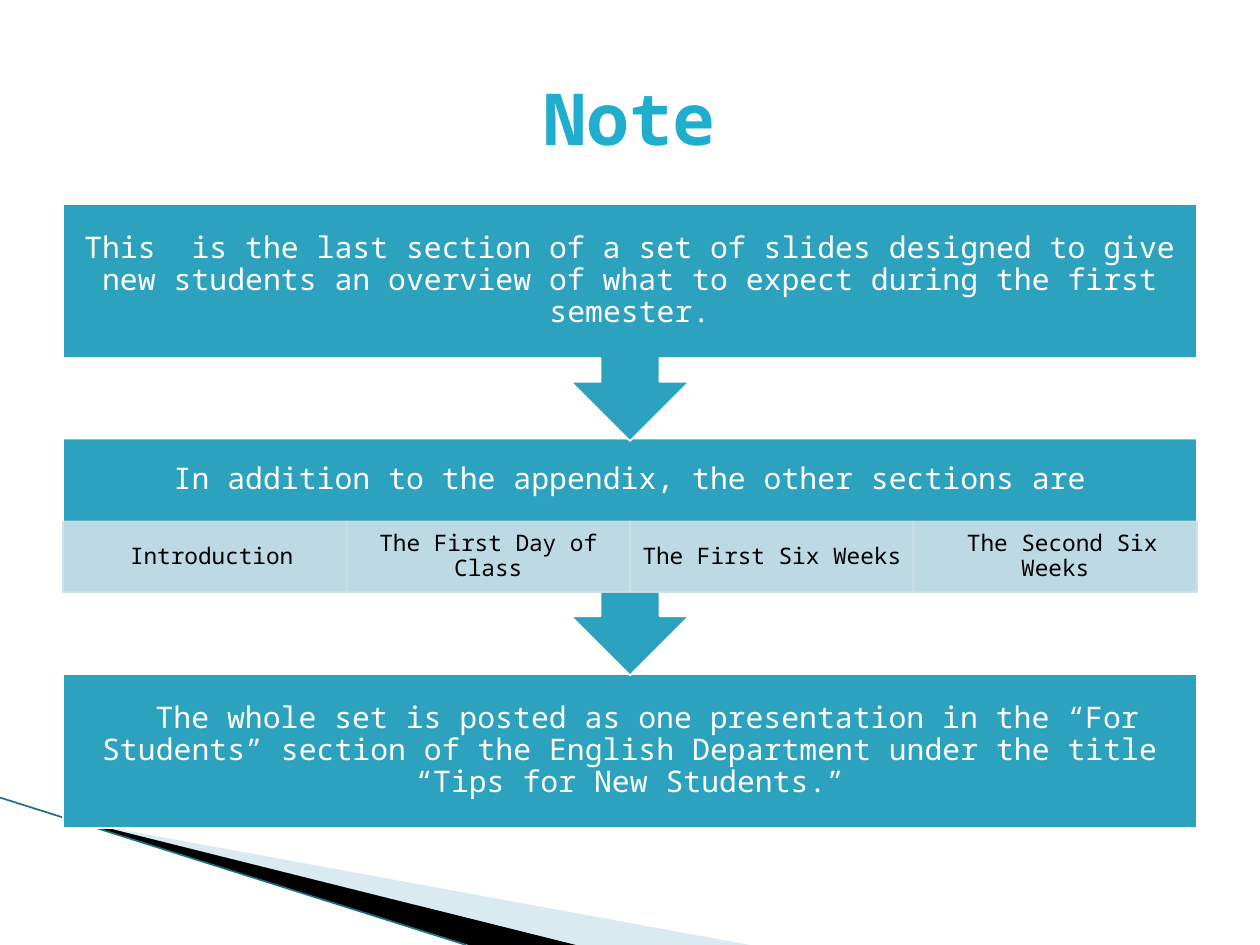
"""Build the Note slide: three statements linked by downward callouts."""
from dataclasses import dataclass

import lxml.etree
import pptx
import pptx.dml.color
import pptx.enum.shapes
import pptx.enum.text
import pptx.oxml.ns
import pptx.util

Inches = pptx.util.Inches
Pt = pptx.util.Pt
Kind = pptx.enum.shapes.MSO_SHAPE


@dataclass(frozen=True)
class Theme:
    font: str = "Noto Sans Mono"
    title_size: float = 41
    statement_size: float = 17
    section_size: float = 13
    title: str = "1FAECD"
    block: str = "2DA2BF"
    section: str = "CDE0E8"
    pale_wedge: str = "A0CBDC"
    edge: str = "1B7088"
    light: str = "FFFFFF"
    dark: str = "000000"


@dataclass(frozen=True)
class Box:
    left: float
    top: float
    width: float
    height: float

    def lengths(self) -> tuple:
        return tuple(Inches(v) for v in (self.left, self.top, self.width, self.height))


@dataclass(frozen=True)
class TextStyle:
    size: float
    color: str
    margins: tuple = (0.13, 0.13)
    spacing: float = 0.9
    bold: bool = False


@dataclass(frozen=True)
class Callout:
    top: float
    text_height: float
    text: str


@dataclass(frozen=True)
class Section:
    text: str
    indent: float = 0


@dataclass(frozen=True)
class Wedge:
    points: tuple
    color: str
    opacity: int = 100


THEME = Theme()
STATEMENT = TextStyle(THEME.statement_size, THEME.light)
SECTION = TextStyle(THEME.section_size, THEME.dark, (0.1, 0.02))
TITLE = TextStyle(THEME.title_size, THEME.title, (0.1, 0.05), 1, True)

LEFT, WIDTH = 0.5, 9
CALLOUT_HEIGHT = 1.88
SECTION_TOP, SECTION_HEIGHT = 4.14, 0.56

CALLOUTS = (
    Callout(1.62, 1.22, "This  is the last section of a set of slides designed to give new "
            "students an overview of what to expect during the first semester."),
    Callout(3.48, 0.66, "In addition to the appendix, the other sections are"),
)
SECTIONS = (
    Section("Introduction", 0.11),
    Section("The First Day of Class"),
    Section("The First Six Weeks"),
    Section("The Second Six Weeks", 0.11),
)
CLOSING = ("The whole set is posted as one presentation in the “For Students” section of "
           "the English Department under the title “Tips for New Students.”")
WEDGES = (
    Wedge(((0.55, 6.51), (5.95, 7.5), (4.56, 7.5), (0.55, 6.5)), THEME.pale_wedge, 40),
    Wedge(((0.53, 6.49), (4.57, 7.5), (3.72, 7.5), (0.54, 6.5)), THEME.dark),
)


def rgb(color: str) -> pptx.dml.color.RGBColor:
    return pptx.dml.color.RGBColor.from_string(color)


def paint(fill, parent, color: str, opacity: int) -> None:
    fill.solid()
    fill.fore_color.rgb = rgb(color)
    if opacity < 100:
        srgb = parent.find(pptx.oxml.ns.qn("a:solidFill"))[0]
        alpha = lxml.etree.SubElement(srgb, pptx.oxml.ns.qn("a:alpha"))
        alpha.set("val", str(opacity * 1000))


def add_block(slide, kind, box: Box, color: str, outline: str, opacity: int = 100):
    block = slide.shapes.add_shape(kind, *box.lengths())
    block.shadow.inherit = False
    paint(block.fill, block.element.spPr, color, opacity)
    block.line.width = Pt(1)
    paint(block.line.fill, block.line._get_or_add_ln(), outline, opacity)
    return block


def write(shape, text: str, style: TextStyle, indent: float = 0) -> None:
    frame = shape.text_frame
    frame.word_wrap = True
    frame.vertical_anchor = pptx.enum.text.MSO_ANCHOR.MIDDLE
    across, down = (Inches(v) for v in style.margins)
    frame.margin_left = frame.margin_right = across
    frame.margin_top = frame.margin_bottom = down
    frame.text = text
    paragraph = frame.paragraphs[0]
    paragraph.alignment = pptx.enum.text.PP_ALIGN.CENTER
    paragraph.line_spacing = style.spacing
    if indent:
        paragraph._p.get_or_add_pPr().set("indent", str(Inches(indent)))
    font = paragraph.runs[0].font
    font.name = THEME.font
    font.size = Pt(style.size)
    font.bold = style.bold
    font.color.rgb = rgb(style.color)


def add_wedge(slide, wedge: Wedge) -> None:
    corners = [(Inches(x), Inches(y)) for x, y in wedge.points]
    builder = slide.shapes.build_freeform(*corners[0], scale=1.0)
    builder.add_line_segments(corners[1:], close=True)
    shape = builder.convert_to_shape()
    shape.shadow.inherit = False
    shape.line.fill.background()
    paint(shape.fill, shape.element.spPr, wedge.color, wedge.opacity)


def add_edge(slide) -> None:
    edge = slide.shapes.add_connector(
        pptx.enum.shapes.MSO_CONNECTOR.STRAIGHT,
        Inches(0), Inches(6.33), Inches(3.7), Inches(7.5))
    edge.line.width = Pt(0.95)
    edge.line.color.rgb = rgb(THEME.edge)
    lxml.etree.SubElement(edge.element.spPr, pptx.oxml.ns.qn("a:effectLst"))


def add_callout(slide, callout: Callout) -> None:
    arrow = add_block(slide, Kind.UP_ARROW_CALLOUT,
                      Box(LEFT, callout.top, WIDTH, CALLOUT_HEIGHT), THEME.block, THEME.light)
    arrow.rotation = 180
    label = slide.shapes.add_textbox(
        *Box(LEFT, callout.top, WIDTH, callout.text_height).lengths())
    write(label, callout.text, STATEMENT)


def add_sections(slide) -> None:
    width = WIDTH / len(SECTIONS)
    for index, section in enumerate(SECTIONS):
        box = Box(LEFT + index * width, SECTION_TOP, width, SECTION_HEIGHT)
        cell = add_block(slide, Kind.RECTANGLE, box, THEME.section, THEME.section, 90)
        write(cell, section.text, SECTION, section.indent)


def main() -> None:
    deck = pptx.Presentation()
    deck.slide_width, deck.slide_height = Inches(10), Inches(7.5)
    slide = deck.slides.add_slide(deck.slide_layouts[6])
    for wedge in WEDGES:
        add_wedge(slide, wedge)
    add_edge(slide)
    closing = add_block(slide, Kind.RECTANGLE, Box(LEFT, 5.35, WIDTH, 1.22),
                        THEME.block, THEME.light)
    write(closing, CLOSING, STATEMENT, 0.28)
    opening, overview = CALLOUTS
    add_callout(slide, overview)
    add_sections(slide)
    add_callout(slide, opening)
    title = slide.shapes.add_textbox(*Box(LEFT, 0.3, WIDTH, 1.25).lengths())
    write(title, "Note", TITLE)
    deck.save("out.pptx")


if __name__ == "__main__":
    main()
